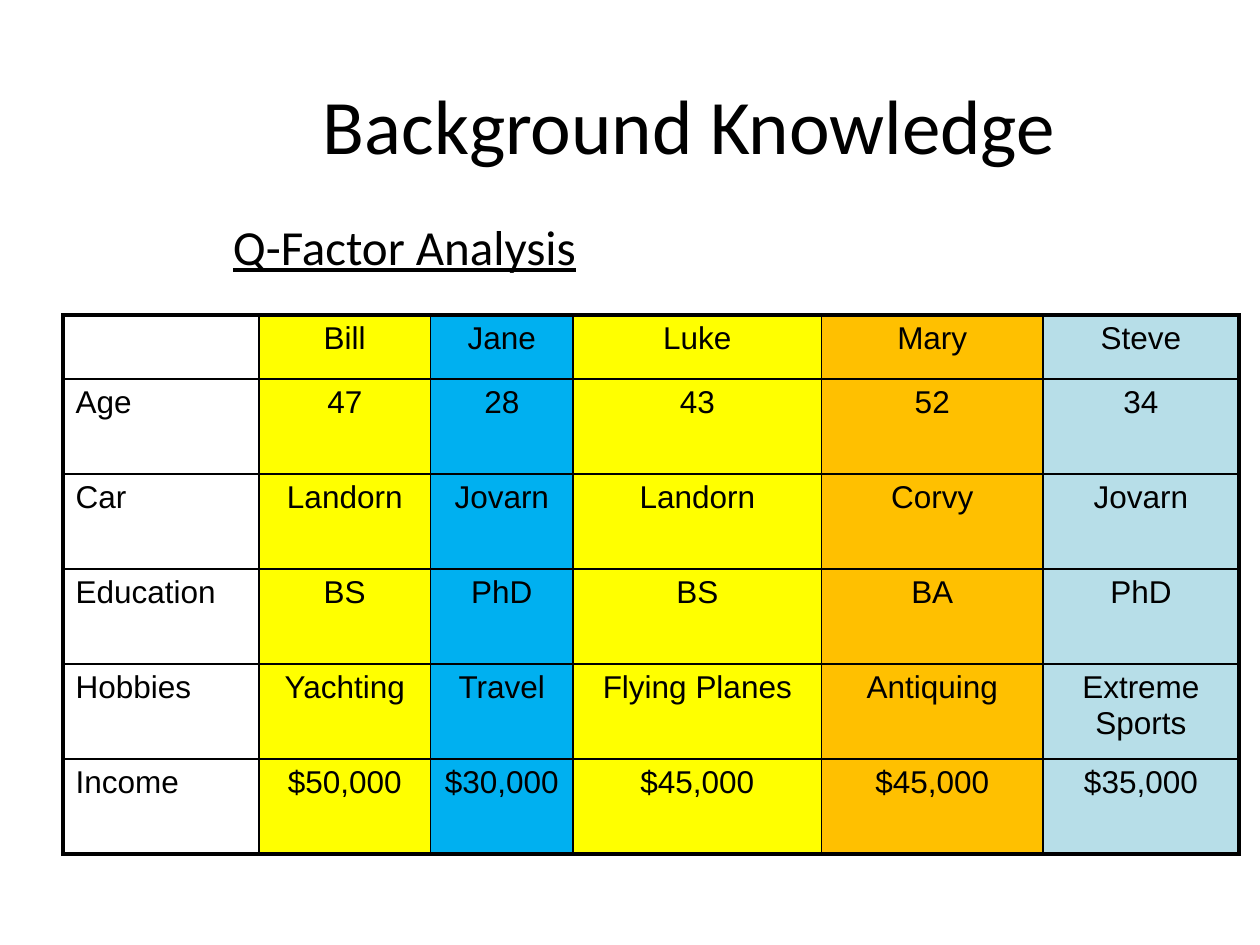
from lxml import etree
from pptx import Presentation
from pptx.dml.color import RGBColor
from pptx.enum.text import MSO_ANCHOR, PP_ALIGN
from pptx.oxml.ns import qn
from pptx.util import Pt

LEFT, CENTER = PP_ALIGN.LEFT, PP_ALIGN.CENTER
TOP, MIDDLE = MSO_ANCHOR.TOP, MSO_ANCHOR.MIDDLE
COLORS = {
    "ink": "000000",
    "yellow": "FFFF00",
    "blue": "00B0F0",
    "orange": "FFC000",
    "pale": "B7DEE8",
}
FILLS = [None, "yellow", "blue", "yellow", "orange", "pale"]
WIDTHS = [112, 98, 81.5, 142, 126.5, 112]
HEIGHTS = [36.6] + [54.3] * 5
ROWS = [
    ["", "Bill", "Jane", "Luke", "Mary", "Steve"],
    ["Age", "47", "28", "43", "52", "34"],
    ["Car", "Landorn", "Jovarn", "Landorn", "Corvy", "Jovarn"],
    ["Education", "BS", "PhD", "BS", "BA", "PhD"],
    ["Hobbies", "Yachting", "Travel", "Flying Planes", "Antiquing", "Extreme Sports"],
    ["Income", "$50,000", "$30,000", "$45,000", "$45,000", "$35,000"],
]


def write(frame, text, font="Calibri", size=18, align=LEFT, line=False):
    para = frame.paragraphs[0]
    para.alignment = align
    run = para.add_run()
    run.text = text
    run.font.name = font
    run.font.size = Pt(size)
    run.font.underline = line
    run.font.color.rgb = RGBColor.from_string(COLORS["ink"])


class Deck:
    thin = 1
    thick = 2.25

    def __init__(self, slide):
        self.slide = slide

    def text(self, x, y, w, h, text, anchor=TOP, **style):
        box = self.slide.shapes.add_textbox(Pt(x), Pt(y), Pt(w), Pt(h))
        frame = box.text_frame
        frame.word_wrap = True
        frame.vertical_anchor = anchor
        write(frame, text, **style)

    def edge(self, cell, side, width):
        props = cell._tc.get_or_add_tcPr()
        line = etree.SubElement(props, qn(f"a:ln{side}"), w=str(Pt(width)))
        fill = etree.SubElement(line, qn("a:solidFill"))
        etree.SubElement(fill, qn("a:srgbClr"), val=COLORS["ink"])

    def table(self, x, y, rows, widths, heights, fills):
        frame = self.slide.shapes.add_table(
            len(rows), len(widths), Pt(x), Pt(y), Pt(sum(widths)), Pt(sum(heights))
        )
        table = frame.table
        table.first_row = table.horz_banding = False
        for col, width in zip(table.columns, widths):
            col.width = Pt(width)
        for row, height in zip(table.rows, heights):
            row.height = Pt(height)
        for r, row in enumerate(rows):
            for c, text in enumerate(row):
                cell = table.cell(r, c)
                outer = {
                    "L": c == 0,
                    "R": c == len(widths) - 1,
                    "T": r == 0,
                    "B": r == len(rows) - 1,
                }
                for side, bold in outer.items():
                    self.edge(cell, side, self.thick if bold else self.thin)
                if fills[c]:
                    cell.fill.solid()
                    cell.fill.fore_color.rgb = RGBColor.from_string(COLORS[fills[c]])
                else:
                    cell.fill.background()
                if text:
                    align = CENTER if c else LEFT
                    write(cell.text_frame, text, font="Arial", align=align)


def main():
    prs = Presentation()
    prs.slide_width, prs.slide_height = Pt(720), Pt(540)
    deck = Deck(prs.slides.add_slide(prs.slide_layouts[6]))
    deck.text(114, 30, 570, 81, "Background Knowledge ", anchor=MIDDLE, size=44, align=CENTER)
    deck.text(126, 120, 594, 60, "Q-Factor Analysis", size=28, line=True)
    deck.table(36, 180, ROWS, WIDTHS, HEIGHTS, FILLS)
    prs.save("out.pptx")


if __name__ == "__main__":
    main()
